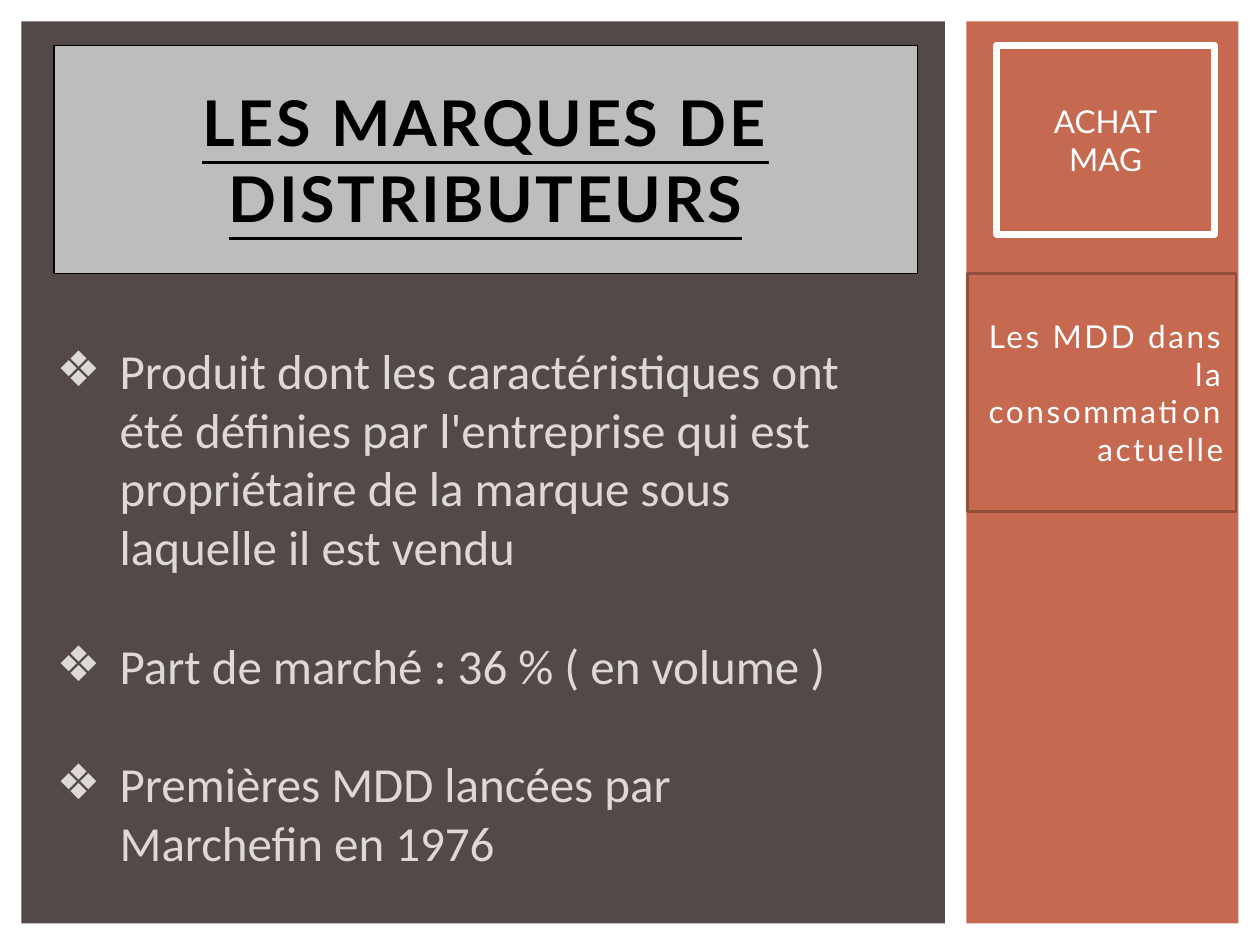
from lxml import etree
from pptx import Presentation
from pptx.dml.color import RGBColor
from pptx.enum.shapes import MSO_SHAPE
from pptx.enum.text import MSO_ANCHOR, MSO_AUTO_SIZE, PP_ALIGN
from pptx.oxml.ns import qn
from pptx.util import Inches, Pt

RECTANGLE = MSO_SHAPE.RECTANGLE
TOP, MIDDLE = MSO_ANCHOR.TOP, MSO_ANCHOR.MIDDLE
LEFT, CENTER, RIGHT = PP_ALIGN.LEFT, PP_ALIGN.CENTER, PP_ALIGN.RIGHT
NO_AUTOFIT = MSO_AUTO_SIZE.NONE
TWO_CONTENT_LAYOUT = 3

COLORS = {
    "main": "534949",
    "side": "C66951",
    "side_line": "924E3C",
    "banner": "BDBDBD",
    "black": "000000",
    "white": "FFFFFF",
    "list": "DED9D9",
}

WIDTH, HEIGHT = 10, 7.5
MARGIN = 0.17
PANEL_HEIGHT = HEIGHT - 2 * MARGIN
MAIN_WIDTH = 7.33
SIDE_LEFT = MARGIN * 2 + MAIN_WIDTH
SIDE_WIDTH = WIDTH - MARGIN - SIDE_LEFT
HEADER_TOP = 0.36
HEADER_BOTTOM = 2.17
BULLET_INDENT = 0.5

DEFINITION = [
    "Produit dont les caractéristiques ont été définies par l'entreprise "
    "qui est propriétaire de la marque sous laquelle il est vendu",
    "Part de marché : 36 % ( en volume )",
    "Premières MDD lancées par\vMarchefin en 1976",
]


def rgb(name):
    return RGBColor.from_string(COLORS[name])


def place(shape, left, top, width, height):
    shape.left, shape.top = Inches(left), Inches(top)
    shape.width, shape.height = Inches(width), Inches(height)


def paint(shape, fill, line=None, line_width=1):
    shape.fill.solid()
    shape.fill.fore_color.rgb = rgb(fill)
    if line:
        shape.line.color.rgb = rgb(line)
        shape.line.width = Pt(line_width)
    else:
        shape.line.fill.background()


def add_box(slide, bounds, fill, **outline):
    box = slide.shapes.add_shape(RECTANGLE, *map(Inches, bounds))
    box.shadow.inherit = False
    paint(box, fill, **outline)
    return box


def add_panel(slide, left, width, fill):
    """Add a full-height colour panel behind the placeholders."""
    panel = add_box(slide, (left, MARGIN, width, PANEL_HEIGHT), fill)
    slide.shapes.element.insert(2, panel.element)


def set_bullet(paragraph, bullet, indent):
    properties = paragraph._p.get_or_add_pPr()
    properties.set("marL", str(Inches(indent)))
    properties.set("indent", str(-Inches(indent)))
    if bullet:
        etree.SubElement(properties, qn("a:buChar")).set("char", bullet)
    else:
        etree.SubElement(properties, qn("a:buNone"))


def write(shape, lines, *, size, color, font="Lato", align=LEFT, anchor=MIDDLE,
          bold=False, underline=False, spacing=0, gap=0, bullet=None, indent=0):
    frame = shape.text_frame
    frame.text = "\n".join(lines)
    frame.word_wrap = True
    frame.auto_size = NO_AUTOFIT
    frame.vertical_anchor = anchor
    for number, paragraph in enumerate(frame.paragraphs):
        paragraph.alignment = align
        paragraph.space_before = Pt(gap if number else 0)
        set_bullet(paragraph, bullet, indent)
        for run in paragraph.runs:
            run.font.name = font
            run.font.size = Pt(size)
            run.font.color.rgb = rgb(color)
            run.font.bold = bold
            run.font.underline = underline
            run.font._element.set("spc", str(int(spacing * 100)))


def main():
    presentation = Presentation()
    presentation.slide_width = Inches(WIDTH)
    presentation.slide_height = Inches(HEIGHT)
    layout = presentation.slide_layouts[TWO_CONTENT_LAYOUT]
    slide = presentation.slides.add_slide(layout)
    title, definition, subject = slide.placeholders

    add_panel(slide, MARGIN, MAIN_WIDTH, "main")
    add_panel(slide, SIDE_LEFT, SIDE_WIDTH, "side")

    place(title, 0.43, HEADER_TOP, 6.85, HEADER_BOTTOM - HEADER_TOP)
    paint(title, "banner", line="black", line_width=0.79)
    write(title, ["LES MARQUES DE DISTRIBUTEURS"], size=36, color="black",
          align=CENTER, bold=True, underline=True, spacing=1.5)

    place(definition, 0.35, 2.65, 6.54, 4.18)
    write(definition, DEFINITION, size=28, color="list", font="Calibri",
          anchor=TOP, gap=34, bullet="❖", indent=BULLET_INDENT)

    place(subject, 7.68, HEADER_BOTTOM, 2.13, 1.89)
    paint(subject, "side", line="side_line", line_width=1.5)
    write(subject, ["Les MDD dans la consommation actuelle"], size=18,
          color="white", align=RIGHT, spacing=1.5)

    magazine = add_box(slide, (7.91, HEADER_TOP, 1.73, 1.5), "side",
                       line="white", line_width=3.75)
    write(magazine, ["ACHAT", "MAG"], size=18, color="white", align=CENTER)

    presentation.save("out.pptx")


if __name__ == "__main__":
    main()
